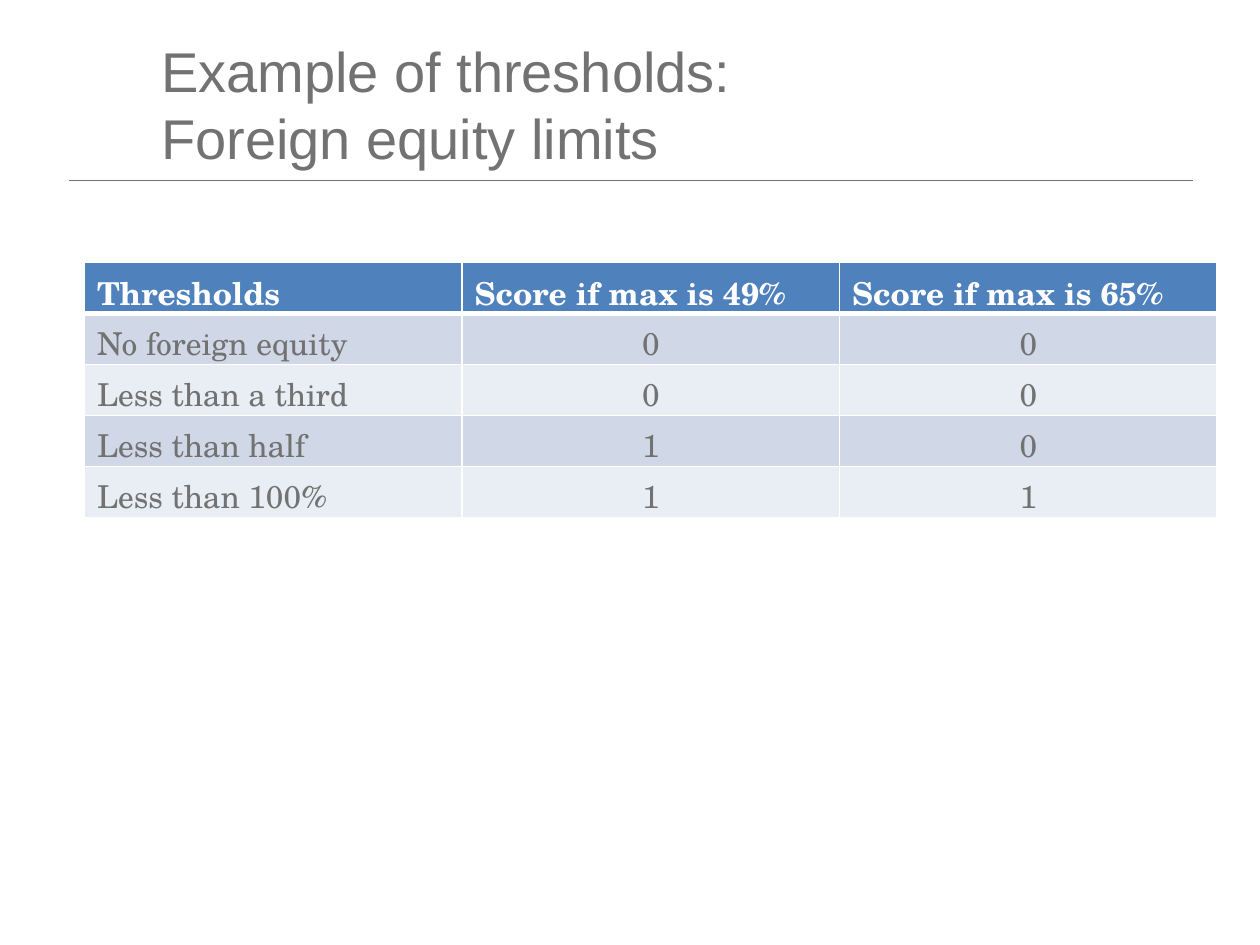
from lxml import etree
from pptx import Presentation, oxml, util as u
from pptx.dml.color import RGBColor
from pptx.enum import shapes, text
from pptx.oxml import ns

GRAY = RGBColor(0x72, 0x72, 0x72)
WHITE = RGBColor(0xFF, 0xFF, 0xFF)
BLUE = RGBColor(0x4F, 0x81, 0xBD)
BANDS = RGBColor(0xD0, 0xD8, 0xE8), RGBColor(0xE9, 0xED, 0xF4)

TITLE = {"name": "Arial", "size": u.Pt(32), "bold": False}
HEAD = {"name": "TeX Gyre Schola", "size": u.Pt(18), "bold": True}
BODY = {**HEAD, "bold": False}

ROWS = [
    ("Thresholds", "Score if max is 49%", "Score if max is 65%"),
    ("No foreign equity", "0", "0"),
    ("Less than a third", "0", "0"),
    ("Less than half", "1", "0"),
    ("Less than 100%", "1", "1"),
]


class Deck:
    def __init__(self, wide, high):
        self.prs = Presentation()
        self.prs.slide_width = u.Inches(wide)
        self.prs.slide_height = u.Inches(high)
        self.slide = self.prs.slides.add_slide(self.prs.slide_layouts[6])

    def style(self, par, form, color):
        for key, value in form.items():
            setattr(par.font, key, value)
        par.font.color.rgb = color

    def rule(self, x, y, wide):
        line = self.slide.shapes.add_connector(
            shapes.MSO_CONNECTOR.STRAIGHT,
            u.Inches(x), u.Inches(y), u.Inches(x + wide), u.Inches(y))
        line.line.color.rgb = GRAY
        line.line.width = u.Pt(0.5)
        etree.SubElement(line._element.spPr, ns.qn("a:effectLst"))

    def title(self, words, *box):
        frame = self.slide.shapes.add_textbox(*map(u.Inches, box)).text_frame
        frame.word_wrap = True
        frame.vertical_anchor = text.MSO_ANCHOR.MIDDLE
        frame.text = words
        self.style(frame.paragraphs[0], TITLE, GRAY)

    def border(self, cell, base):
        props = cell._tc.get_or_add_tcPr()
        for side in "LRTB":
            width = u.Pt(base if side == "B" else 1)
            props.append(oxml.parse_xml(
                f'<a:ln{side} {ns.nsdecls("a")} w="{width}"><a:solidFill>'
                f'<a:srgbClr val="{WHITE}"/></a:solidFill></a:ln{side}>'))

    def table(self, rows, x, y, wide, high):
        grid = self.slide.shapes.add_table(
            len(rows), len(rows[0]), u.Inches(x), u.Inches(y),
            u.Inches(wide), u.Inches(high)).table
        for r, row in enumerate(rows):
            head = r == 0
            for c, words in enumerate(row):
                cell = grid.cell(r, c)
                cell.text = words
                par = cell.text_frame.paragraphs[0]
                self.style(par, HEAD if head else BODY, WHITE if head else GRAY)
                if c and not head:
                    par.alignment = text.PP_ALIGN.CENTER
                self.border(cell, 3 if head else 1)
                cell.fill.solid()
                cell.fill.fore_color.rgb = BLUE if head else BANDS[(r - 1) % 2]


def main():
    deck = Deck(10, 7.5)
    deck.rule(0.55, 1.43, 8.92)
    deck.title("Example of thresholds:\vForeign equity limits", 1.18, 0.26, 8.11, 1.12)
    deck.table(ROWS, 0.67, 2.08, 8.99, 2.03)
    deck.prs.save("out.pptx")


if __name__ == "__main__":
    main()
